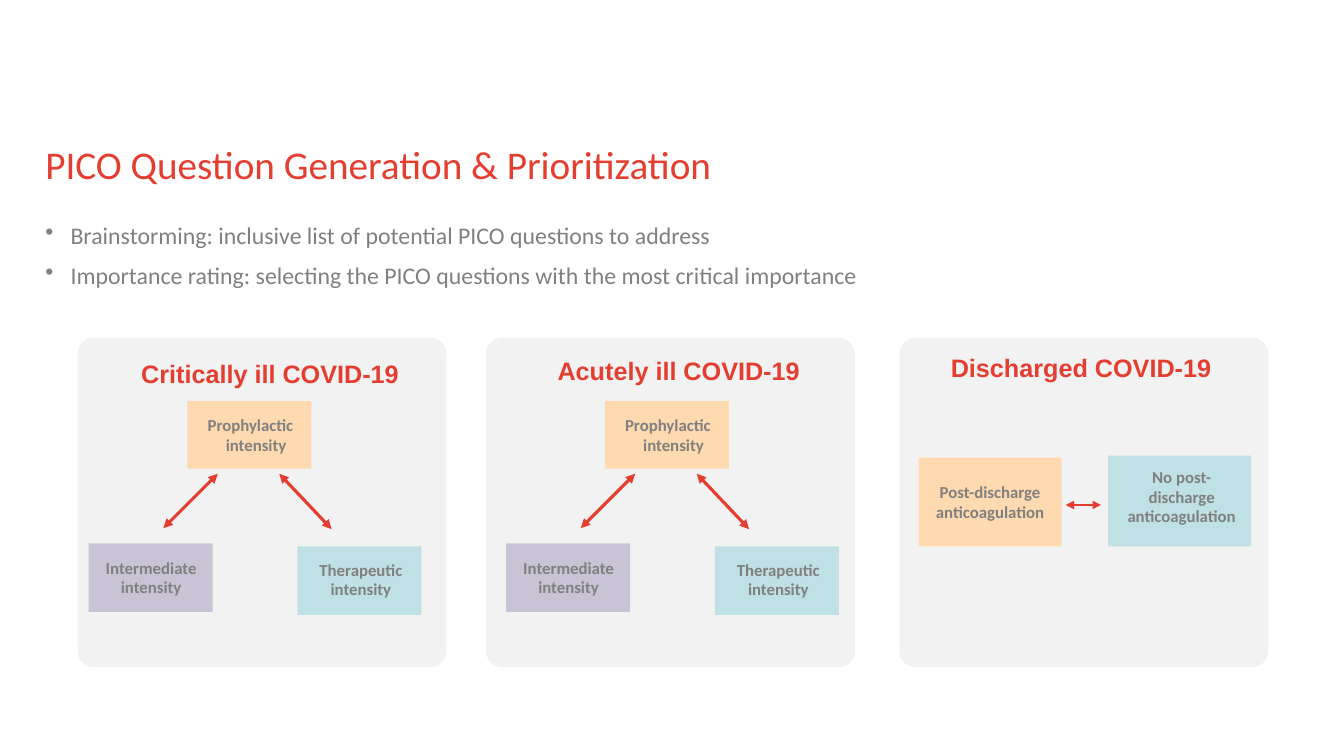
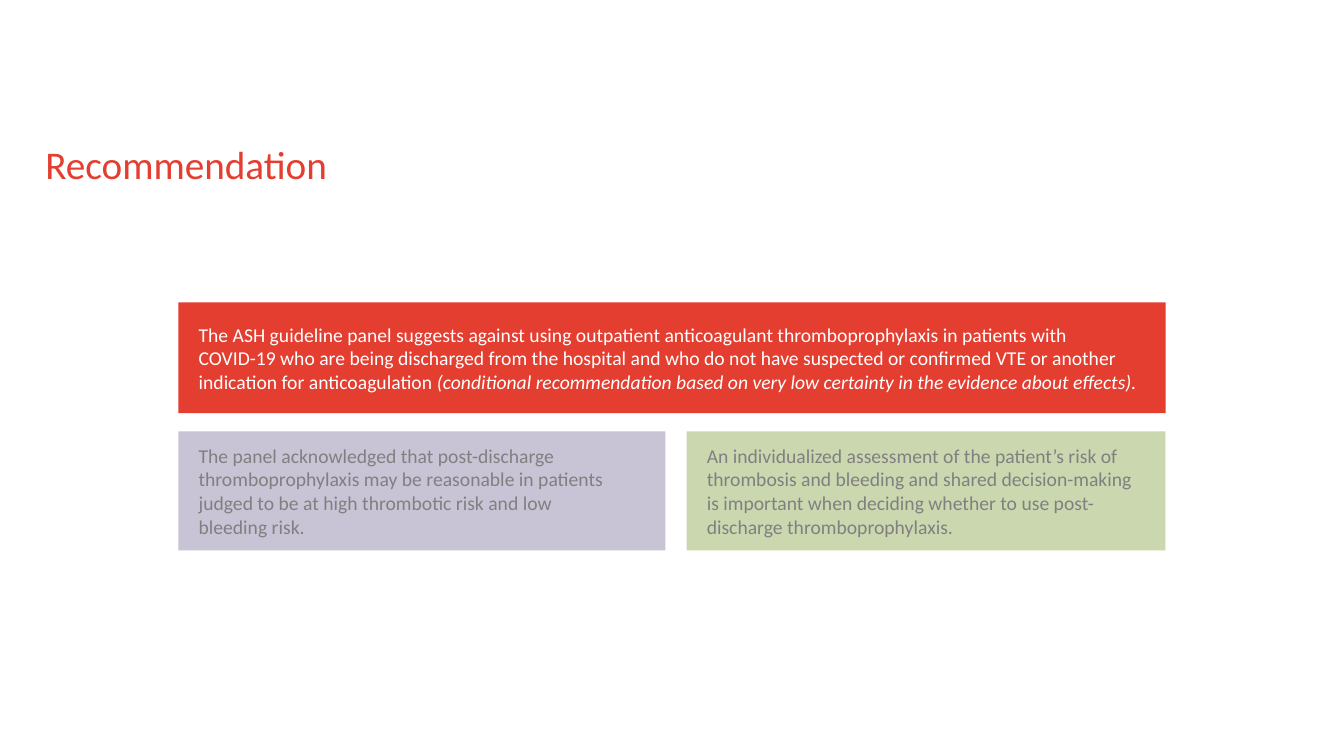
from dataclasses import dataclass

from lxml.etree import SubElement
from pptx import Presentation
from pptx.dml.color import RGBColor
from pptx.enum.shapes import MSO_CONNECTOR, MSO_SHAPE
from pptx.enum.text import MSO_ANCHOR, PP_ALIGN
from pptx.oxml.ns import qn
from pptx.shapes.autoshape import Shape
from pptx.slide import Slide
from pptx.text.text import TextFrame, _Paragraph
from pptx.util import Inches, Pt


@dataclass(frozen=True)
class Theme:
    red: str = "E43E31"
    gray: str = "808080"
    white: str = "FFFFFF"
    card: str = "F2F2F2"
    peach: str = "FFD9B0"
    mauve: str = "C8C3D5"
    teal: str = "BFE0E4"
    green: str = "CAD7AF"
    body: str = "Calibri"
    head: str = "Arial"
    title: float = 28
    list: float = 17
    label: float = 18
    node: float = 12
    panel: float = 14


@dataclass(frozen=True)
class Box:
    x: float
    y: float
    w: float
    h: float


@dataclass(frozen=True)
class Style:
    size: float
    color: str
    font: str
    bold: bool = False


@dataclass(frozen=True)
class Node:
    text: str
    box: Box
    fill: str
    left: float = 0
    right: float = 0
    low: float = 0
    hang: bool = False


@dataclass(frozen=True)
class Arrow:
    x1: float
    y1: float
    x2: float
    y2: float
    width: float = 2.25


@dataclass(frozen=True)
class Card:
    x: float
    label: str
    label_x: float
    label_y: float


@dataclass(frozen=True)
class Panel:
    text: str
    box: Box
    fill: str
    color: str
    right: float = 0.2
    tail: str = ""


T = Theme()
TITLE = Style(T.title, T.red, T.body)
LIST = Style(T.list, T.gray, T.body)
LABEL = Style(T.label, T.red, T.head, True)
NODE = Style(T.node, T.gray, T.body, True)

# Slide 1 content
POINTS = [
    "Brainstorming: inclusive list of potential PICO questions to address",
    "Importance rating: selecting the PICO questions with the most critical importance",
]
CARDS = [
    Card(0.77, "Critically ill COVID-19", 1.4, 3.54),
    Card(4.82, "Acutely ill COVID-19", 5.53, 3.52),
    Card(8.92, "Discharged COVID-19", 9.43, 3.49),
]
FLOWS = [0.88, 5.02]  # left edges of the three-way comparisons
TRIO = [
    Node("Prophylactic intensity", Box(0.98, 3.98, 1.23, 0.67), T.peach,
         left=0.18, hang=True),
    Node("Intermediate intensity", Box(0, 5.39, 1.23, 0.68), T.mauve, left=0.01),
    Node("Therapeutic intensity", Box(2.07, 5.42, 1.23, 0.68), T.teal,
         left=0.03, low=0.02),
]
TRIO_ARROWS = [Arrow(0.74, 5.24, 1.28, 4.7), Arrow(1.89, 4.7, 2.41, 5.25)]
PAIR = [
    Node("Post-discharge anticoagulation", Box(9.11, 4.54, 1.42, 0.88), T.peach),
    Node("No post-discharge anticoagulation", Box(10.99, 4.52, 1.42, 0.9), T.teal,
         left=0.15, right=0.11, low=0.08),
]
PAIR_ARROW = Arrow(10.57, 5.01, 10.92, 5.01, 1.5)

# Slide 2 content
PANELS = [
    Panel("The ASH guideline panel suggests against using outpatient anticoagulant "
          "thromboprophylaxis in patients with COVID-19 who are being discharged from "
          "the hospital and who do not have suspected or confirmed VTE or another "
          "indication for anticoagulation ",
          Box(1.77, 3, 9.79, 1.1), T.red, T.white, 0.24,
          "(conditional recommendation based on very low certainty in the evidence "
          "about effects)."),
    Panel("The panel acknowledged that post-discharge thromboprophylaxis may be "
          "reasonable in patients judged to be at high thrombotic risk and low\n"
          "bleeding risk.",
          Box(1.77, 4.28, 4.83, 1.18), T.mauve, T.gray),
    Panel("An individualized assessment of the patient’s risk of thrombosis and "
          "bleeding and shared decision-making is important when deciding whether to "
          "use post-discharge thromboprophylaxis.",
          Box(6.81, 4.28, 4.75, 1.18), T.green, T.gray),
]


def dress(para: _Paragraph, style: Style) -> None:
    font = para.font
    font.name, font.size, font.bold = style.font, Pt(style.size), style.bold
    font.color.rgb = RGBColor.from_string(style.color)


def indent(para: _Paragraph, left: float, first: float) -> None:
    props = para._p.get_or_add_pPr()
    props.set("marL", str(Inches(left)))
    props.set("indent", str(Inches(first)))


def pad(frame: TextFrame, left: float = 0, top: float = 0,
        right: float = 0, low: float = 0) -> None:
    frame.word_wrap = True
    frame.margin_left, frame.margin_top = Inches(left), Inches(top)
    frame.margin_right, frame.margin_bottom = Inches(right), Inches(low)


def add_text(slide: Slide, box: Box, lines: list[str], style: Style,
             top: float = 0.01, bullet: bool = False) -> None:
    frame = slide.shapes.add_textbox(
        Inches(box.x), Inches(box.y), Inches(box.w), Inches(box.h)).text_frame
    pad(frame, top=top)
    for i, line in enumerate(lines):
        para = frame.add_paragraph() if i else frame.paragraphs[0]
        para.text = line
        if i:
            para.space_before = Pt(8.3)
        if bullet:
            indent(para, 0.26, -0.25)
            SubElement(para._p.get_or_add_pPr(), qn("a:buChar")).set("char", "•")
        dress(para, style)


def add_block(slide: Slide, box: Box, fill: str,
              kind: MSO_SHAPE = MSO_SHAPE.RECTANGLE) -> Shape:
    shape = slide.shapes.add_shape(
        kind, Inches(box.x), Inches(box.y), Inches(box.w), Inches(box.h))
    shape.shadow.inherit = False
    shape.fill.solid()
    shape.fill.fore_color.rgb = RGBColor.from_string(fill)
    shape.line.fill.background()
    shape.text_frame.vertical_anchor = MSO_ANCHOR.MIDDLE
    return shape


def add_node(slide: Slide, node: Node, dx: float = 0) -> None:
    box = Box(node.box.x + dx, node.box.y, node.box.w, node.box.h)
    frame = add_block(slide, box, node.fill).text_frame
    pad(frame, node.left, 0, node.right, node.low)
    para = frame.paragraphs[0]
    para.text = node.text
    para.alignment = PP_ALIGN.LEFT if node.hang else PP_ALIGN.CENTER
    para.line_spacing = Pt(14)
    if node.hang:
        indent(para, 0.2, -0.18)
    dress(para, NODE)


def add_arrow(slide: Slide, arrow: Arrow, dx: float = 0) -> None:
    link = slide.shapes.add_connector(
        MSO_CONNECTOR.STRAIGHT, Inches(arrow.x1 + dx), Inches(arrow.y1),
        Inches(arrow.x2 + dx), Inches(arrow.y2))
    link.line.color.rgb = RGBColor.from_string(T.red)
    link.line.width = Pt(arrow.width)
    line = link.line._get_or_add_ln()
    for end in ("a:headEnd", "a:tailEnd"):
        SubElement(line, qn(end)).set("type", "triangle")
    SubElement(link._element.spPr, qn("a:effectLst"))


def add_panel(slide: Slide, panel: Panel) -> None:
    frame = add_block(slide, panel.box, panel.fill).text_frame
    pad(frame, 0.2, 0, panel.right)
    para = frame.paragraphs[0]
    para.text = panel.text
    para.alignment = PP_ALIGN.LEFT
    if panel.tail:
        run = para.add_run()
        run.text = panel.tail
        run.font.italic = True
    dress(para, Style(T.panel, panel.color, T.body))


def add_slide(deck: Presentation, title: str) -> Slide:
    slide = deck.slides.add_slide(deck.slide_layouts[6])
    add_text(slide, Box(0.45, 1.38, 7.52, 0.49), [title], TITLE)
    return slide


def draw_pico(deck: Presentation) -> None:
    slide = add_slide(deck, "PICO Question Generation & Prioritization")
    add_text(slide, Box(0.44, 2.06, 8.4, 0.82), POINTS, LIST, 0.13, True)
    # Cards with their headings
    for card in CARDS:
        back = add_block(slide, Box(card.x, 3.35, 3.66, 3.27), T.card,
                         MSO_SHAPE.ROUNDED_RECTANGLE)
        back.adjustments[0] = 0.05
        add_text(slide, Box(card.label_x, card.label_y, 2.75, 0.33),
                 [card.label], LABEL)
    # Three-way comparisons
    for x in FLOWS:
        for node in TRIO:
            add_node(slide, node, x)
        for arrow in TRIO_ARROWS:
            add_arrow(slide, arrow, x)
    # Two-way comparison
    for node in PAIR:
        add_node(slide, node)
    add_arrow(slide, PAIR_ARROW)


def draw_advice(deck: Presentation) -> None:
    slide = add_slide(deck, "Recommendation")
    for panel in PANELS:
        add_panel(slide, panel)


def main() -> None:
    deck = Presentation()
    deck.slide_width, deck.slide_height = Inches(13.33), Inches(7.5)
    draw_pico(deck)
    draw_advice(deck)
    deck.save("out.pptx")


if __name__ == "__main__":
    main()
